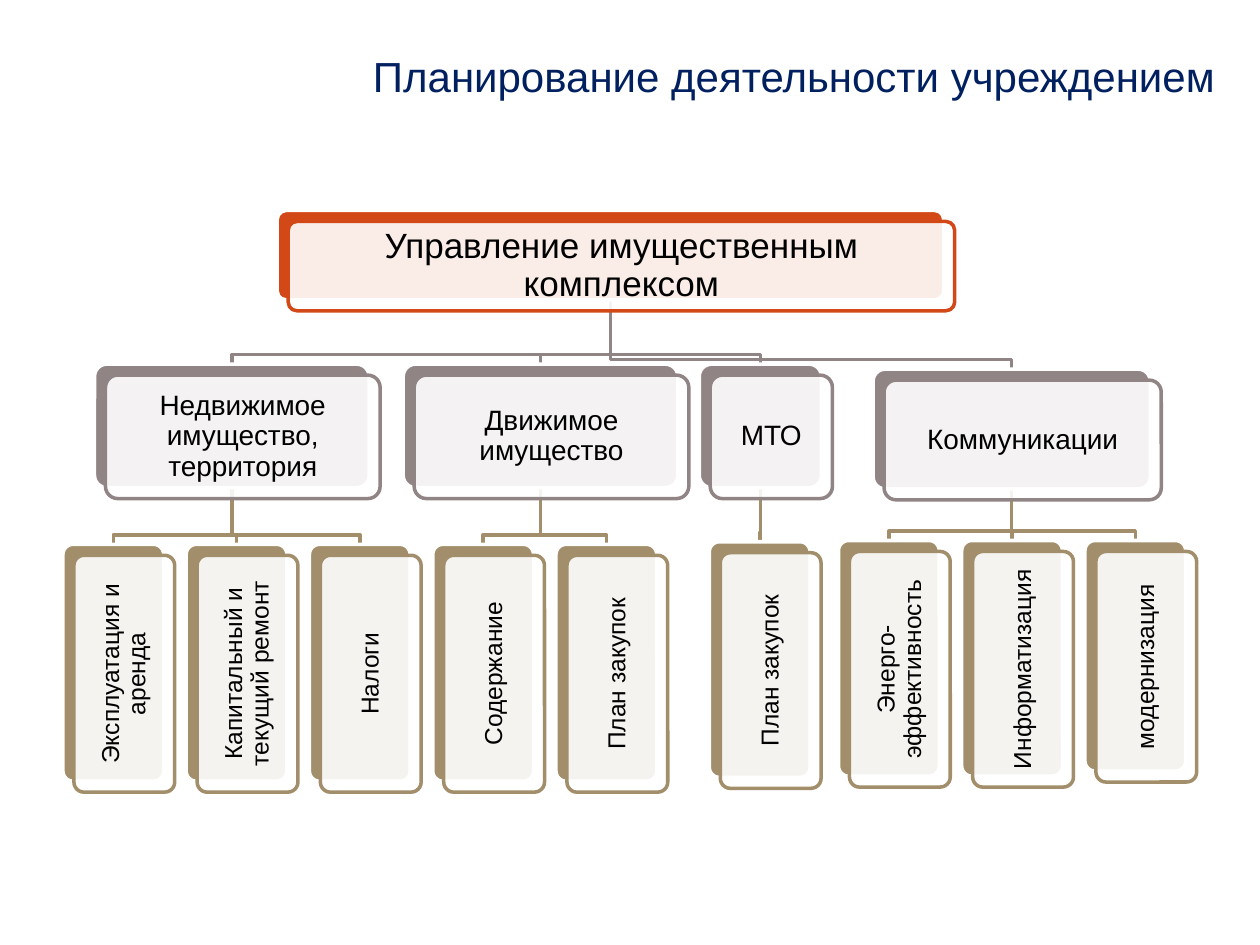
from dataclasses import dataclass
from typing import Any

from lxml.etree import SubElement
from pptx import Presentation
from pptx.dml.color import RGBColor
from pptx.enum.shapes import MSO_SHAPE as Kind
from pptx.enum.text import MSO_ANCHOR as Anchor, PP_ALIGN as Align
from pptx.oxml.ns import qn
from pptx.util import Inches, Pt

RUST, GREY, TAN, WHITE = "D34817", "918485", "A28E6A", "FFFFFF"
PITCH, LEAF, SHIFT, DROP = 9.78, 8, 0.87, 0.75

ROOT = ("Управление имущественным комплексом", 22, 16.7, 52.9, 7.1)
TREE = [
    (("Недвижимое имущество, территория", 7.5, 28.9, 21.8, 9.8), 5, 43.2,
     [("Эксплуатация и аренда", 18.8), ("Капитальный и текущий ремонт", 18.8), ("Налоги", 18.8)]),
    (("Движимое имущество", 32, 28.9, 21.8, 9.8), 34.35, 43.2,
     [("Содержание", 18.8), ("План закупок", 18.8)]),
    (("МТО", 55.5, 28.9, 9.7, 9.8), 56.3, 43,
     [("План закупок", 18.7)]),
    (("Коммуникации", 69.3, 29.3, 22, 9.5), 66.55, 42.9,
     [("Энерго-эффективность", 18.7), ("Информатизация", 18.7), ("модернизация", 18.3)]),
]


def hue(code):
    return RGBColor.from_string(code)


def unit(n):
    return Inches(n / 10)


def write(frame, text, size=14, color="000000", align=Align.CENTER, inset=0.1, gap=1.0, turn=None):
    frame.word_wrap = True
    frame.vertical_anchor = Anchor.MIDDLE
    frame.margin_left = frame.margin_right = Inches(inset)
    frame.margin_top = frame.margin_bottom = Inches(inset)
    if turn:
        frame._element.find(qn("a:bodyPr")).set("vert", turn)
    para = frame.paragraphs[0]
    para.alignment = align
    para.line_spacing = gap
    run = para.add_run()
    run.text = text
    run.font.name = "Arial"
    run.font.size = Pt(size)
    run.font.color.rgb = hue(color)


@dataclass
class Chart:
    slide: Any
    width: float = 2

    def title(self, text, *area):
        box = self.slide.shapes.add_textbox(*map(unit, area))
        write(box.text_frame, text, size=24, color="002060", align=Align.RIGHT)

    def link(self, top, end, color):
        _, x, y, w, h = top
        _, left, foot, wide, _ = end
        start, stop = x + w / 2, left + wide / 2
        bend = foot - DROP
        path = self.slide.shapes.build_freeform(unit(start), unit(y + h))
        dots = [(start, bend), (stop, bend), (stop, foot)]
        path.add_line_segments([(unit(a), unit(b)) for a, b in dots], close=False)
        line = path.convert_to_shape()
        line.shadow.inherit = False
        line.fill.background()
        self.edge(line, color)

    def edge(self, shape, color):
        shape.line.color.rgb = hue(color)
        shape.line.width = Pt(self.width)

    def plate(self, x, y, w, h, fill, line):
        shape = self.slide.shapes.add_shape(Kind.ROUNDED_RECTANGLE, *map(unit, (x, y, w, h)))
        shape.adjustments[0] = 0.1
        shape.shadow.inherit = False
        shape.fill.solid()
        shape.fill.fore_color.rgb = hue(fill)
        self.edge(shape, line)
        return shape

    def card(self, node, color, **form):
        text, x, y, w, h = node
        self.plate(x, y, w, h, color, WHITE)
        front = self.plate(x + SHIFT, y + SHIFT, w, h, WHITE, color)
        tint = front.element.spPr.find(qn("a:solidFill"))[0]
        SubElement(tint, qn("a:alpha")).set("val", "90000")
        write(front.text_frame, text, gap=0.9, **form)


def main():
    deck = Presentation()
    deck.slide_width, deck.slide_height = Inches(10), Inches(7.5)
    chart = Chart(deck.slides.add_slide(deck.slide_layouts[6]))
    chart.title("Планирование деятельности учреждением", 20.9, 1.3, 76.5, 9.4)

    groups = [
        (head, [(name, x + i * PITCH, y, LEAF, h) for i, (name, h) in enumerate(names)])
        for head, x, y, names in TREE
    ]
    for head, leaves in reversed(groups):
        for leaf in reversed(leaves):
            chart.link(head, leaf, TAN)
        chart.link(ROOT, head, GREY)

    chart.card(ROOT, RUST, size=20, inset=0.08)
    for head, leaves in groups:
        chart.card(head, GREY, size=16, inset=0.07)
        for leaf in leaves:
            chart.card(leaf, TAN, size=14, inset=0.06, turn="vert270")

    deck.save("out.pptx")


if __name__ == "__main__":
    main()
